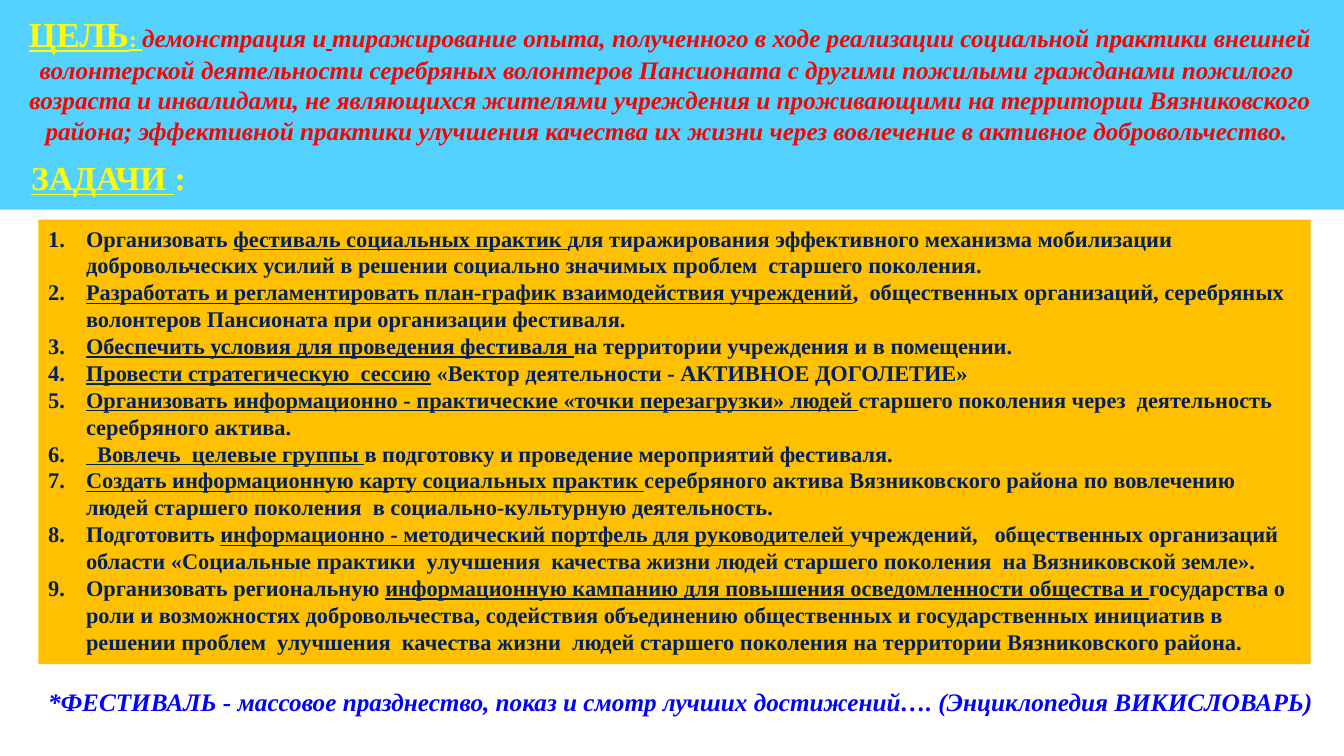
import pptx
import pptx.util
import pptx.dml.color
import pptx.enum.shapes
import pptx.enum.text
from lxml import etree

Inches, Pt = pptx.util.Inches, pptx.util.Pt
RGBColor = pptx.dml.color.RGBColor
ANCHOR = pptx.enum.text.MSO_ANCHOR

SKY = RGBColor(0x53, 0xD2, 0xFF)
AMBER = RGBColor(0xFF, 0xC0, 0x00)
YELLOW = RGBColor(0xFF, 0xFF, 0x00)
RED = RGBColor(0xFF, 0x00, 0x00)
NAVY = RGBColor(0x00, 0x20, 0x60)
BLUE = RGBColor(0x00, 0x00, 0xFF)

W, H = 13.33, 7.5
MARGIN = 0.38

prs = pptx.Presentation()
prs.slide_width, prs.slide_height = Inches(W), Inches(H)
s = prs.slides.add_slide(prs.slide_layouts[6])


def add_box(x, y, w, h, fill=None, anchor=ANCHOR.TOP):
    box = [Inches(v) for v in (x, y, w, h)]
    if fill is None:
        sp = s.shapes.add_textbox(*box)
    else:
        sp = s.shapes.add_shape(pptx.enum.shapes.MSO_SHAPE.RECTANGLE, *box)
        sp.shadow.inherit = False
        sp.fill.solid()
        sp.fill.fore_color.rgb = fill
        sp.line.fill.background()
    tf = sp.text_frame
    tf.word_wrap = True
    tf.vertical_anchor = anchor
    tf.paragraphs[0].alignment = pptx.enum.text.PP_ALIGN.LEFT
    return tf


def add_run(p, text, size, color, underline=False, italic=False):
    r = p.add_run()
    r.text = text
    r.font.name = "Times New Roman"
    r.font.size = Pt(size)
    r.font.color.rgb = color
    r.font.bold = True
    r.font.underline = underline
    r.font.italic = italic


# Goal on the blue band
tf = add_box(-0.05, 0, 13.39, 2.08, SKY)
tf.margin_top = Inches(0.12)
p = tf.paragraphs[0]
p.alignment = pptx.enum.text.PP_ALIGN.CENTER
add_run(p, "ЦЕЛЬ", 25.2, YELLOW, underline=True)
add_run(p, ": ", 16.2, YELLOW, underline=True)
add_run(p, "демонстрация и", 18, RED, italic=True)
add_run(p, " ", 16.2, RED, underline=True)
add_run(p, "тиражирование опыта, полученного в ходе реализации социальной практики внешней "
        "волонтерской деятельности серебряных волонтеров Пансионата с другими пожилыми "
        "гражданами пожилого  возраста и инвалидами, не являющихся жителями учреждения и "
        "проживающими на территории Вязниковского района; эффективной практики улучшения "
        "качества их жизни через вовлечение в активное добровольчество. ",
        18, RED, italic=True)

# Tasks heading
p = add_box(0.21, 1.51, 1.81, 0.5).paragraphs[0]
add_run(p, "ЗАДАЧИ ", 24, YELLOW, underline=True)
add_run(p, ":", 24, YELLOW)

# Numbered tasks: plain lead, underlined key words, plain rest
tasks = [
    ("Организовать ", "фестиваль социальных практик ",
     "для тиражирования эффективного механизма мобилизации добровольческих усилий "
     "в решении социально значимых проблем  старшего поколения."),
    ("", "Разработать и регламентировать план-график взаимодействия учреждений",
     ",  общественных организаций, серебряных волонтеров Пансионата при организации "
     "фестиваля."),
    ("", "Обеспечить условия для проведения фестиваля ",
     "на территории учреждения и в помещении."),
    ("", "Провести стратегическую  сессию",
     " «Вектор деятельности - АКТИВНОЕ ДОГОЛЕТИЕ»"),
    ("", "Организовать информационно - практические «точки перезагрузки» людей ",
     "старшего поколения через  деятельность серебряного актива."),
    ("", "  Вовлечь  целевые группы ",
     "в подготовку и проведение мероприятий фестиваля."),
    ("", "Создать информационную карту социальных практик ",
     "серебряного актива Вязниковского района по вовлечению людей старшего поколения  "
     "в социально-культурную деятельность."),
    ("Подготовить ", "информационно - методический портфель для руководителей ",
     "учреждений,   общественных организаций области «Социальные практики  улучшения  "
     "качества жизни людей старшего поколения  на Вязниковской земле»."),
    ("Организовать региональную ",
     "информационную кампанию для повышения осведомленности общества и ",
     "государства о роли и возможностях добровольчества, содействия объединению "
     "общественных и государственных инициатив в  решении проблем  улучшения  качества "
     "жизни  людей старшего поколения на территории Вязниковского района."),
]
tf = add_box(MARGIN, 2.18, 12.62, 4.41, AMBER)
for i, (lead, key, rest) in enumerate(tasks):
    p = tf.paragraphs[0] if i == 0 else tf.add_paragraph()
    p.alignment = pptx.enum.text.PP_ALIGN.LEFT
    pPr = p._p.get_or_add_pPr()
    pPr.set("marL", str(Inches(0.375)))
    pPr.set("indent", str(-Inches(0.375)))
    num = etree.SubElement(pPr, pptx.oxml.ns.qn("a:buAutoNum"))
    num.set("type", "arabicPeriod")
    for text, underline in ((lead, False), (key, True), (rest, False)):
        if text:
            add_run(p, text, 16, NAVY, underline)

# Footnote
p = add_box(MARGIN, 6.58, W - MARGIN, 0.76, anchor=ANCHOR.MIDDLE).paragraphs[0]
add_run(p, "*ФЕСТИВАЛЬ - массовое празднество, показ и смотр лучших достижений…. "
        "(Энциклопедия ВИКИСЛОВАРЬ)", 18, BLUE, italic=True)

prs.save("out.pptx")
